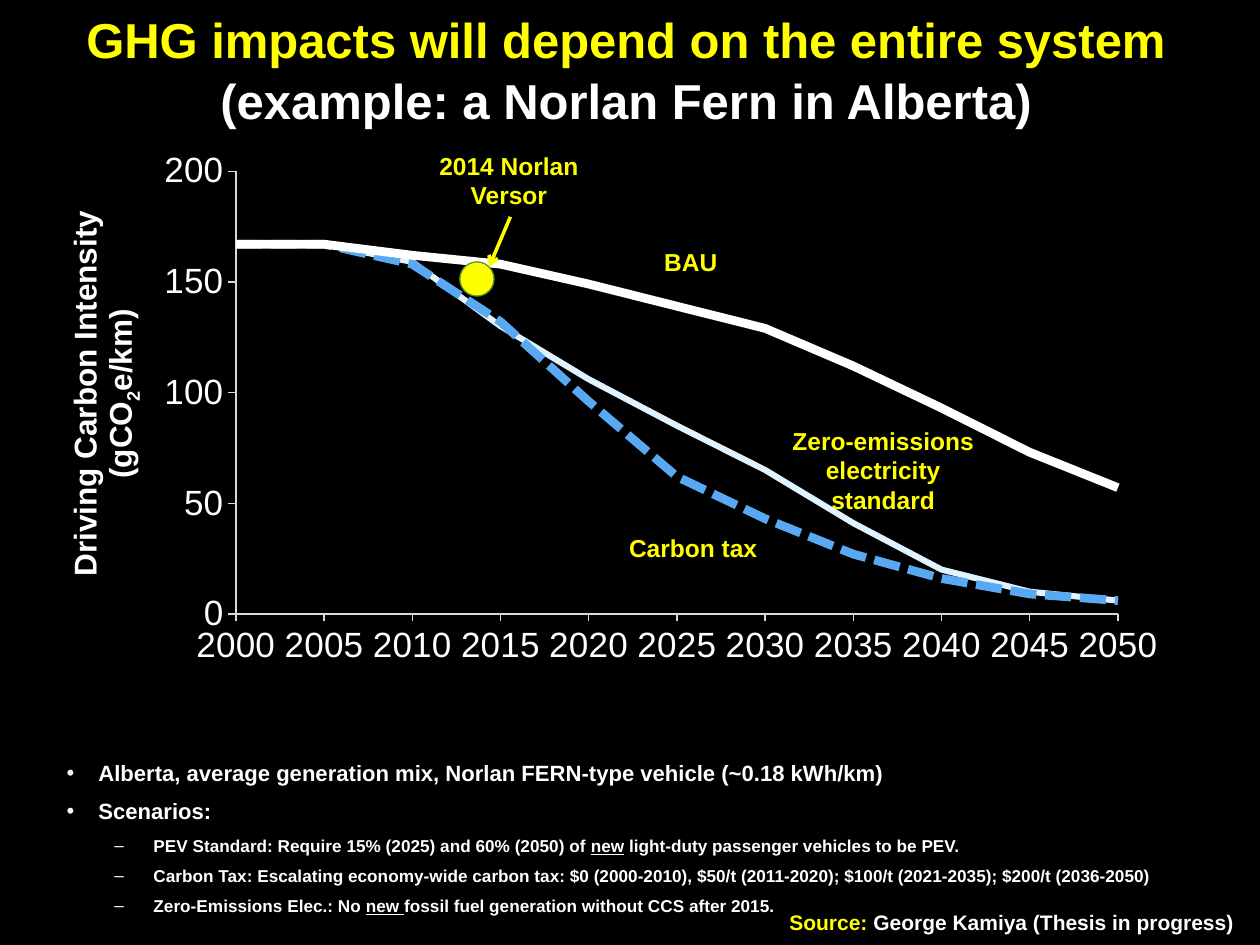
from lxml.etree import SubElement
from pptx import Presentation
from pptx.chart.data import XyChartData
from pptx.dml.color import RGBColor
from pptx.enum.chart import XL_CHART_TYPE as ChartType, XL_MARKER_STYLE as Marker, XL_TICK_MARK as Tick
from pptx.enum.dml import MSO_LINE as Dash
from pptx.enum.shapes import MSO_CONNECTOR as Connector, MSO_SHAPE as Shape
from pptx.enum.text import MSO_ANCHOR as Anchor, MSO_AUTO_SIZE as AutoSize, PP_ALIGN as Align
from pptx.oxml import parse_xml
from pptx.oxml.ns import nsdecls, qn
from pptx.util import Cm, Pt

COLORS = {"black": "000000", "white": "FFFFFF", "yellow": "FFFF00", "blue": "59A9F2",
          "pale": "E1F2FF", "green": "58912C", "gray": "D9D9D9", "bullet": "F9F9F9"}
YEARS = range(2000, 2051, 5)
SERIES = [
    ("BAU", [167, 167, 162, 158, 149, 139, 129, 112, 93, 73, 57], "white", 5, None),
    ("Carbon tax", [167, 167, 158, 132, 96, 62, 43, 27, 16, 9, 6], "blue", 5, Dash.SQUARE_DOT),
    ("Zero-emissions", [167, 167, 159, 130, 106, 85, 65, 41, 20, 10, 6], "pale", 3.5, None),
]
BULLETS = [
    (0, ["Alberta, average generation mix, Norlan FERN-type vehicle (~0.18 kWh/km)"]),
    (0, ["Scenarios:"]),
    (1, ["PEV Standard: Require 15% (2025) and 60% (2050) of ", "new",
         " light-duty passenger vehicles to be PEV."]),
    (1, ["Carbon Tax: Escalating economy-wide carbon tax: $0 (2000-2010), $50/t (2011-2020); "
         "$100/t (2021-2035); $200/t (2036-2050)"]),
    (1, ["Zero-Emissions Elec.: No ", "new ", "fossil fuel generation without CCS after 2015."]),
]
LEVELS = [(12.6, 6.4, 0.64, 0.64, "•", "bullet"), (9.8, 5.3, 1.75, 0.79, "–", "white")]
LABELS = [
    ((12.45, 4.85, 2.95, 0.86), ["BAU"]),
    ((12.07, 10.62, 3.81, 0.86), ["Carbon tax"]),
    ((15.29, 8.46, 5.03, 2.06), ["Zero-emissions electricity", "standard"]),
    ((8.48, 2.92, 3.56, 1.45), ["2014 Norlan Versor"]),
]


class SlideBuilder:
    """Holds the style and the current slide, with a method for each kind of element."""

    def __init__(self, slide, font="Arial"):
        self.slide, self.font_name = slide, font
        fill = slide.background.fill
        fill.solid()
        fill.fore_color.rgb = self.color("black")

    def color(self, name):
        return RGBColor.from_string(COLORS[name])

    def style(self, font, size, color, bold=True):
        font.name, font.size, font.bold = self.font_name, Pt(size), bold
        font.color.rgb = self.color(color)

    def add_run(self, para, text, size, color):
        span = para.add_run()
        span.text = text
        self.style(span.font, size, color)
        return span

    def place(self, box, area):
        box.left, box.top, box.width, box.height = map(Cm, area)
        box.text_frame.auto_size = AutoSize.NONE
        box.text_frame.vertical_anchor = Anchor.TOP

    def title(self, area, spans):
        box = self.slide.shapes.title
        self.place(box, area)
        para = box.text_frame.paragraphs[0]
        para.alignment, para.line_spacing = Align.CENTER, 1.05
        for text, color in spans:
            self.add_run(para, text, 28, color)

    def bullets(self, area, items):
        box = self.slide.placeholders[1]
        self.place(box, area)
        frame = box.text_frame
        for index, (level, texts) in enumerate(items):
            size, after, margin, hanging, mark, mark_color = LEVELS[level]
            para = frame.add_paragraph() if index else frame.paragraphs[0]
            para.level, para.space_before, para.space_after = level, Pt(0), Pt(after)
            props = para._p.get_or_add_pPr()
            props.set("marL", str(Cm(margin)))
            props.set("indent", str(-Cm(hanging)))
            tint = SubElement(props, qn("a:buClr"))
            SubElement(tint, qn("a:srgbClr"), val=COLORS[mark_color])
            SubElement(props, qn("a:buFont"), typeface=self.font_name)
            SubElement(props, qn("a:buChar"), char=mark)
            for position, text in enumerate(texts):
                span = self.add_run(para, text, size, "white")
                span.font.underline = position == 1

    def label(self, area, paragraphs, size=14, wrap=True):
        frame = self.slide.shapes.add_textbox(*map(Cm, area)).text_frame
        frame.word_wrap = wrap
        for index, spans in enumerate(paragraphs):
            para = frame.add_paragraph() if index else frame.paragraphs[0]
            para.alignment = Align.CENTER
            for text, color in spans:
                self.add_run(para, text, size, color)

    def dot(self, left, top, size):
        dot = self.slide.shapes.add_shape(Shape.OVAL, Cm(left), Cm(top), Cm(size), Cm(size))
        dot.shadow.inherit = False
        dot.fill.solid()
        dot.fill.fore_color.rgb = self.color("yellow")
        dot.line.color.rgb = self.color("green")
        dot.line.width = Pt(0.75)

    def arrow(self, *ends):
        arrow = self.slide.shapes.add_connector(Connector.STRAIGHT, *map(Cm, ends))
        arrow.line.color.rgb = self.color("yellow")
        arrow.line.width = Pt(2)
        SubElement(arrow.line._get_or_add_ln(), qn("a:tailEnd"), type="arrow")
        SubElement(arrow._element.spPr, qn("a:effectLst"))

    def layout(self, x, y, width=None, height=None):
        parts = [("xMode", "edge"), ("yMode", "edge"), ("x", x), ("y", y)]
        if width:
            parts.insert(0, ("layoutTarget", "inner"))
            parts += [("w", width), ("h", height)]
        inner = "".join(f'<c:{tag} val="{value}"/>' for tag, value in parts)
        return parse_xml(f'<c:layout {nsdecls("c")}><c:manualLayout>{inner}</c:manualLayout></c:layout>')

    def axis(self, axis, low, high, step):
        axis.minimum_scale, axis.maximum_scale, axis.major_unit = low, high, step
        axis.has_major_gridlines = False
        axis.major_tick_mark, axis.minor_tick_mark = Tick.OUTSIDE, Tick.NONE
        axis.tick_labels.number_format = "0"
        axis.tick_labels.number_format_is_linked = False
        self.style(axis.tick_labels.font, 20, "white", False)
        axis.format.line.color.rgb = self.color("gray")
        axis.format.line.width = Pt(0.75)

    def chart(self, area, lines):
        data = XyChartData()
        for name, values, *_ in lines:
            series = data.add_series(name)
            for year, value in zip(YEARS, values):
                series.add_data_point(year, value)
        chart = self.slide.shapes.add_chart(
            ChartType.XY_SCATTER_SMOOTH_NO_MARKERS, *map(Cm, area), data).chart
        chart.has_legend = chart.has_title = False
        self.style(chart.font, 20, "white", False)
        chart.plots[0].vary_by_categories = False
        for series, (_, _, color, width, dash) in zip(chart.plots[0].series, lines):
            series.smooth = True
            series.marker.style = Marker.NONE
            line = series.format.line
            line.color.rgb = self.color(color)
            line.width = Pt(width)
            if dash:
                line.dash_style = dash
        self.axis(chart.category_axis, 2000, 2050, 5)
        self.axis(chart.value_axis, 0, 200, 50)
        plot_area = chart._chartSpace.chart.plotArea
        for old in plot_area.findall(qn("c:layout")):
            plot_area.remove(old)
        plot_area.insert(0, self.layout(0.175, 0.055, 0.733, 0.802))
        self.axis_title(chart.value_axis.axis_title)

    def axis_title(self, title):
        frame = title.text_frame
        self.add_run(frame.paragraphs[0], "Driving Carbon Intensity", 18, "white")
        para = frame.add_paragraph()
        for text in ("(gCO", "2", "e/km)"):
            span = self.add_run(para, text, 18, "white")
            if text == "2":
                span.font._element.set("baseline", "-25000")
        frame._txBody.find(qn("a:bodyPr")).set("rot", "-5400000")
        element = title._element
        for old in element.findall(qn("c:layout")):
            element.remove(old)
        element.find(qn("c:tx")).addnext(self.layout(0.03, 0.12))


def main():
    deck = Presentation()
    deck.slide_width, deck.slide_height = Cm(25.4), Cm(19.05)
    page = SlideBuilder(deck.slides.add_slide(deck.slide_layouts[1]))
    page.chart((0.51, 2.84, 24.26, 11.13), SERIES)
    page.bullets((1.09, 15.19, 22.86, 3.4), BULLETS)
    page.dot(9.27, 5.28, 0.69)
    page.title((1.19, 0, 22.86, 1.68), [
        ("GHG impacts will depend on the entire system ", "yellow"),
        ("(example: a Norlan Fern in Alberta)", "white")])
    page.label((15.62, 18.21, 9.55, 0.76), [
        [("Source:", "yellow"), (" George Kamiya (Thesis in progress)", "white")]], 12, False)
    for area, texts in LABELS:
        page.label(area, [[(text, "yellow")] for text in texts])
    page.arrow(10.29, 4.37, 9.86, 5.38)
    deck.save("out.pptx")


if __name__ == "__main__":
    main()
